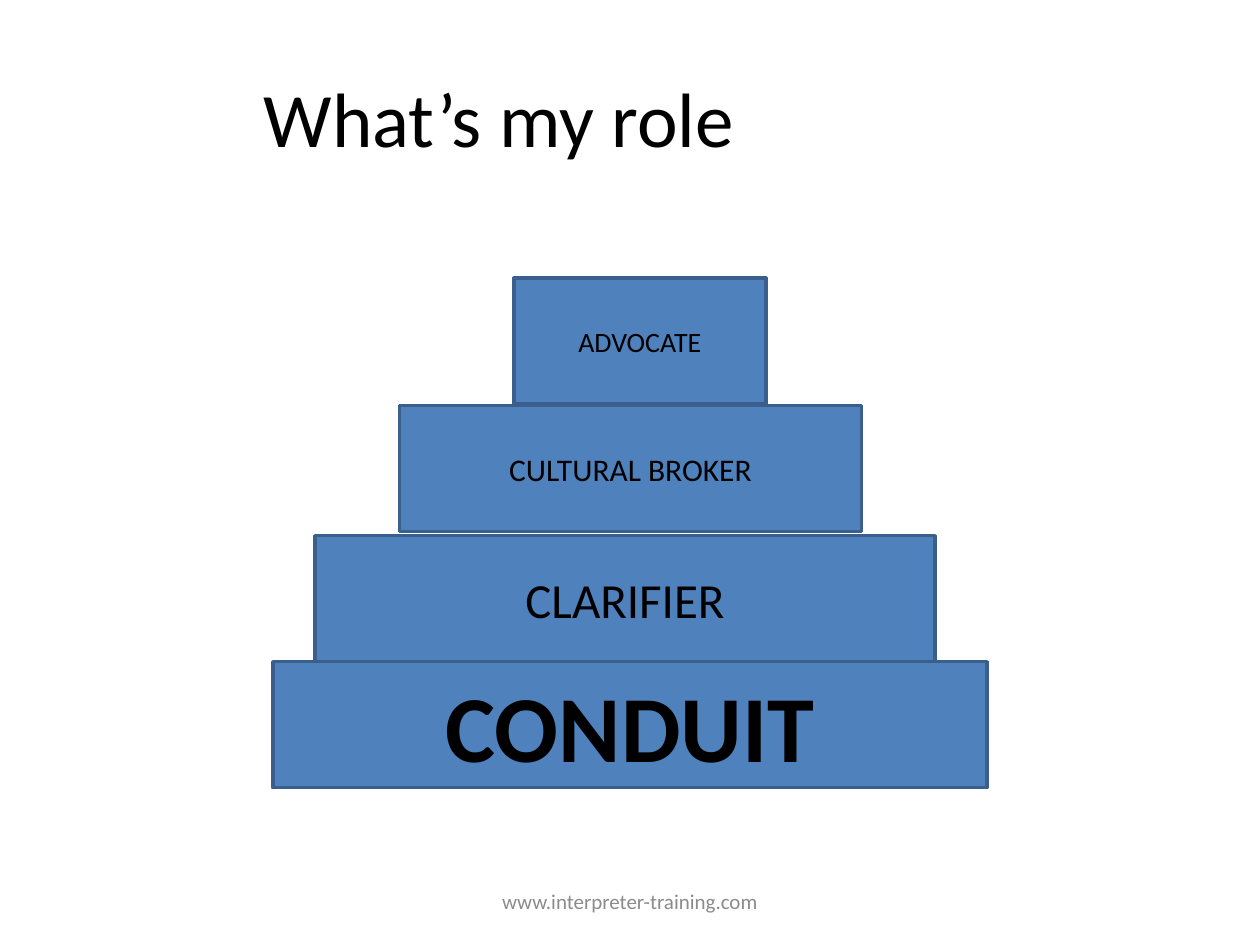
from pptx import Presentation
from pptx.dml.color import RGBColor
from pptx.enum.shapes import MSO_SHAPE
from pptx.enum.text import MSO_ANCHOR, PP_ALIGN
from pptx.util import Cm, Pt

BLACK = RGBColor(0x00, 0x00, 0x00)
WHITE = RGBColor(0xFF, 0xFF, 0xFF)
GRAY = RGBColor(0x8B, 0x8B, 0x8B)
BLUE = RGBColor(0x4F, 0x81, 0xBD)
DARK_BLUE = RGBColor(0x3A, 0x5F, 0x8C)

TITLE = "What’s my role"
FOOTER = "www.interpreter-training.com"
STEP_HEIGHT = 2.54
STEPS = [
    ("CONDUIT", 5.5, 13.34, 14.4, 54, True),
    ("CLARIFIER", 6.35, 10.8, 12.5, 28, False),
    ("CULTURAL BROKER", 8.05, 8.18, 9.32, 18, False),
    ("ADVOCATE", 10.36, 5.61, 5.08, 16, False),
]


def write(sp, text, size, color, bold=False):
    tf = sp.text_frame
    tf.text = text
    tf.word_wrap = True
    tf.vertical_anchor = MSO_ANCHOR.MIDDLE
    p = tf.paragraphs[0]
    p.alignment = PP_ALIGN.CENTER
    font = p.runs[0].font
    font.name = "Calibri"
    font.size = Pt(size)
    font.bold = bold
    font.color.rgb = color


prs = Presentation()
prs.slide_width, prs.slide_height = Cm(25.4), Cm(19.05)
s = prs.slides.add_slide(prs.slide_layouts[5])
s.background.fill.solid()
s.background.fill.fore_color.rgb = WHITE

title = s.shapes.title
title.left, title.top, title.width, title.height = Cm(1.27), Cm(0.76), Cm(17.58), Cm(3.18)
write(title, TITLE, 44, BLACK)

footer = s.shapes.add_textbox(Cm(8.68), Cm(17.66), Cm(8.04), Cm(1.01))
write(footer, FOOTER, 12, GRAY)

for label, left, top, width, size, bold in STEPS:
    sp = s.shapes.add_shape(
        MSO_SHAPE.RECTANGLE, Cm(left), Cm(top), Cm(width), Cm(STEP_HEIGHT)
    )
    sp.shadow.inherit = False
    sp.fill.solid()
    sp.fill.fore_color.rgb = BLUE
    sp.line.color.rgb = DARK_BLUE
    sp.line.width = Pt(2)
    write(sp, label, size, BLACK, bold)

prs.save("out.pptx")
